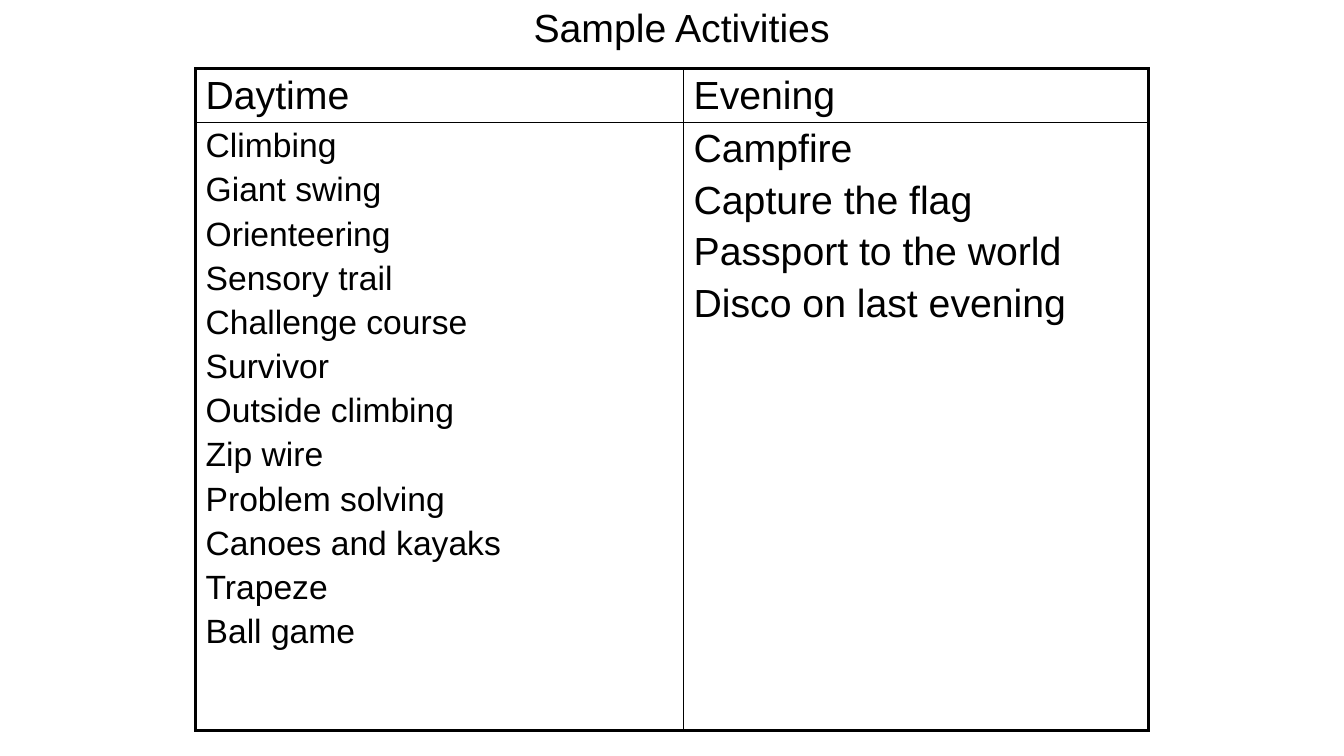
from lxml import etree
from pptx import Presentation
from pptx.dml.color import RGBColor
from pptx.enum.text import MSO_ANCHOR, PP_ALIGN
from pptx.oxml.ns import qn
from pptx.util import Inches, Pt

CENTER, LEFT = PP_ALIGN.CENTER, PP_ALIGN.LEFT
MIDDLE, TOP = MSO_ANCHOR.MIDDLE, MSO_ANCHOR.TOP
BLACK = RGBColor(0, 0, 0)
WHITE = RGBColor(255, 255, 255)
FONT = "Arial"
OUTER, INNER = 2.25, 1
COL_WIDTHS = [4.84, 4.61]
ROW_HEIGHTS = [0.51, 6.03]
DAYTIME = ["Climbing", "Giant swing", "Orienteering", "Sensory trail",
           "Challenge course", "Survivor", "Outside climbing", "Zip wire",
           "Problem solving", "Canoes and kayaks", "Trapeze", "Ball game"]
EVENING = ["Campfire", "Capture the flag", "Passport to the world",
           "Disco on last evening"]
CELLS = [[(["Daytime"], 28), (["Evening"], 28)],
         [(DAYTIME, 24), (EVENING, 28)]]


def add_run(p, text, size):
    r = p.add_run()
    r.text = text
    r.font.name = FONT
    r.font.size = Pt(size)
    r.font.bold = False
    r.font.color.rgb = BLACK


def set_title(s, text, left, top, width, height):
    sp = s.shapes.title
    sp.left, sp.top = Inches(left), Inches(top)
    sp.width, sp.height = Inches(width), Inches(height)
    tf = sp.text_frame
    tf.vertical_anchor = MIDDLE
    p = tf.paragraphs[0]
    p.alignment = CENTER
    p.line_spacing = 0.9
    add_run(p, text, 28)


def fill_cell(cell, lines, size):
    tf = cell.text_frame
    for i, line in enumerate(lines):
        p = tf.add_paragraph() if i else tf.paragraphs[0]
        p.alignment = LEFT
        p.space_before = Pt(size * 0.2 if i else 0)
        add_run(p, line, size)
    cell.vertical_anchor = TOP


def set_borders(cell, widths):
    tcPr = cell._tc.get_or_add_tcPr()
    for side, width in widths.items():
        ln = etree.SubElement(tcPr, qn(f"a:ln{side}"), w=str(Pt(width)))
        fill = etree.SubElement(ln, qn("a:solidFill"))
        etree.SubElement(fill, qn("a:srgbClr"), val=str(BLACK))


def add_activity_table(s, left, top):
    rows, cols = len(ROW_HEIGHTS), len(COL_WIDTHS)
    table = s.shapes.add_table(
        rows, cols, Inches(left), Inches(top),
        Inches(sum(COL_WIDTHS)), Inches(sum(ROW_HEIGHTS))).table
    table.first_row = table.horz_banding = False
    for col, width in zip(table.columns, COL_WIDTHS):
        col.width = Inches(width)
    for row, height in zip(table.rows, ROW_HEIGHTS):
        row.height = Inches(height)
    for i, row in enumerate(CELLS):
        for j, (lines, size) in enumerate(row):
            cell = table.cell(i, j)
            fill_cell(cell, lines, size)
            set_borders(cell, {
                "L": OUTER if j == 0 else INNER,
                "R": OUTER if j == cols - 1 else INNER,
                "T": OUTER if i == 0 else INNER,
                "B": OUTER if i == rows - 1 else INNER})
            cell.fill.solid()
            cell.fill.fore_color.rgb = WHITE


def main():
    prs = Presentation()
    prs.slide_width, prs.slide_height = Inches(13.33), Inches(7.5)
    s = prs.slides.add_slide(prs.slide_layouts[5])
    set_title(s, "Sample Activities", 2.26, 0, 9, 0.6)
    add_activity_table(s, 1.94, 0.68)
    prs.save("out.pptx")


if __name__ == "__main__":
    main()
